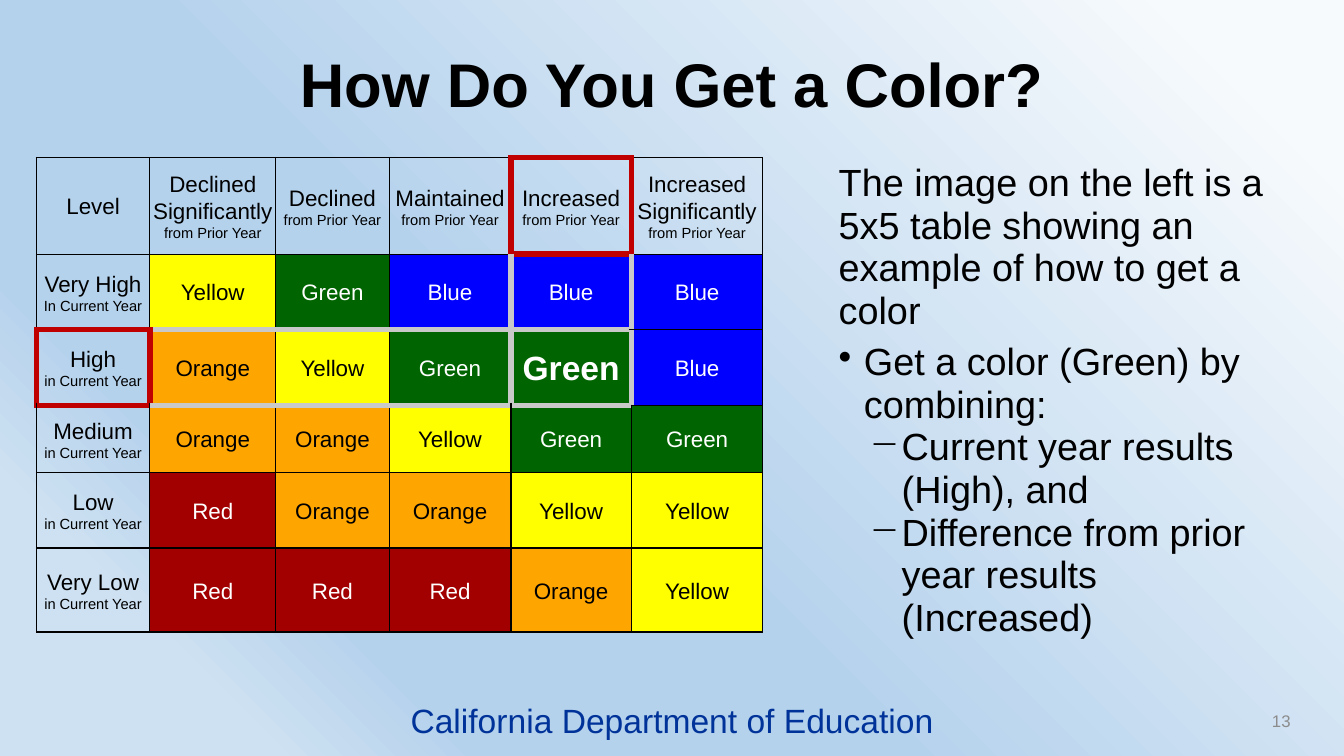
from lxml import etree
from pptx import Presentation
from pptx.dml.color import RGBColor
from pptx.enum import text
from pptx.oxml import ns
from pptx.util import Pt

FONT = "Arial"
COLORS = {
    "black": "000000", "white": "FFFFFF", "navy": "003399", "gray": "8C8C8C",
    "outcome": "C00000", "path": "C9C9C9",
    "Red": "A20000", "Orange": "FFA500", "Yellow": "FFFF00",
    "Green": "006500", "Blue": "0000FF",
}
GRADIENT = [(8, "F7FAFD"), (57, "B5D2EC"), (77, "B5D2EC"), (87, "CEE1F2")]

COLUMN_WIDTHS = [81, 90, 81, 87, 86, 94]
ROW_HEIGHTS = [69, 54, 54, 48, 54, 60]
CHANGES = ["Declined Significantly", "Declined", "Maintained", "Increased",
           "Increased Significantly"]
LEVELS = [
    ("Very High", "In Current Year", "Yellow Green Blue Blue Blue"),
    ("High", "in Current Year", "Orange Yellow Green Green Blue"),
    ("Medium", "in Current Year", "Orange Orange Yellow Green Green"),
    ("Low", "in Current Year", "Red Orange Orange Yellow Yellow"),
    ("Very Low", "in Current Year", "Red Red Red Orange Yellow"),
]
ONE_PARAGRAPH_LEVELS = ("High", "Very Low")
RESULT = (2, 4)
# Frames as (rows, columns, color); later frames cover earlier ones.
FRAMES = [
    (range(1, 3), range(4, 5), "path"),
    (range(2, 3), range(1, 5), "path"),
    (range(0, 1), range(4, 5), "outcome"),
    (range(2, 3), range(0, 1), "outcome"),
]
# Each side: row step and column step to the neighbor, and the neighbor's side.
SIDES = {"L": (0, -1, "R"), "R": (0, 1, "L"), "T": (-1, 0, "B"), "B": (1, 0, "T")}

BODY = [
    ("The image on the left is a 5x5 table showing an example of how to get a color",
     0, None, 0, 0, 6),
    ("Get a color (Green) by combining:", 0, "•", 18, -18, 0),
    ("Current year results (High), and", 1, "−", 45, -23, 0),
    ("Difference from prior year results (Increased)", 1, "−", 45, -23, 0),
]


def add_run(paragraph, words, size, color="black", bold=False):
    run = paragraph.add_run()
    run.text = words
    run.font.name = FONT
    run.font.size = Pt(size)
    run.font.bold = bold
    run.font.color.rgb = RGBColor.from_string(COLORS[color])


def paint_background(slide):
    fill = slide.background.fill
    fill.gradient()
    fill.gradient_angle = 225
    stops = next(slide.element.iter(ns.qn("a:gsLst")))
    for stop in list(stops):
        stops.remove(stop)
    for position, color in GRADIENT:
        stop = etree.SubElement(stops, ns.qn("a:gs"), pos=str(position * 1000))
        etree.SubElement(stop, ns.qn("a:srgbClr"), val=color)


def add_title(slide, words):
    title = slide.shapes.title
    title.left, title.top, title.width, title.height = Pt(0), Pt(0), Pt(960), Pt(124.5)
    frame = title.text_frame
    frame.vertical_anchor = text.MSO_ANCHOR.MIDDLE
    paragraph = frame.paragraphs[0]
    paragraph.alignment = text.PP_ALIGN.CENTER
    paragraph.line_spacing = 0.9
    add_run(paragraph, words, 44, bold=True)


def add_text_box(slide, left, top, width, height, anchor):
    shape = slide.shapes.add_textbox(Pt(left), Pt(top), Pt(width), Pt(height))
    shape.text_frame.word_wrap = True
    shape.text_frame.vertical_anchor = anchor
    return shape.text_frame


def add_label(slide, place, words, size, color, alignment):
    paragraph = add_text_box(slide, *place, text.MSO_ANCHOR.MIDDLE).paragraphs[0]
    paragraph.alignment = alignment
    add_run(paragraph, words, size, color)


def add_body(slide):
    frame = add_text_box(slide, 592, 112.5, 337, 355, text.MSO_ANCHOR.TOP)
    for index, (words, level, bullet, margin, indent, after) in enumerate(BODY):
        paragraph = frame.add_paragraph() if index else frame.paragraphs[0]
        paragraph.level = level
        paragraph.line_spacing = 0.94
        paragraph.space_after = Pt(after)
        add_run(paragraph, words, 27)
        if bullet:
            properties = paragraph._p.get_or_add_pPr()
            properties.set("marL", str(Pt(margin)))
            properties.set("indent", str(Pt(indent)))
            etree.SubElement(properties, ns.qn("a:buChar"), char=bullet)


def format_cell(cell, fill=None):
    cell.margin_left = cell.margin_right = Pt(2)
    cell.margin_top, cell.margin_bottom = Pt(0.7), Pt(0)
    cell.vertical_anchor = text.MSO_ANCHOR.MIDDLE
    if fill:
        cell.fill.solid()
        cell.fill.fore_color.rgb = RGBColor.from_string(COLORS[fill])
    else:
        cell.fill.background()


def format_paragraph(paragraph):
    paragraph.alignment = text.PP_ALIGN.CENTER
    paragraph.line_spacing = 1.07
    return paragraph


def fill_heading(cell, heading, period=None, one_paragraph=False):
    format_cell(cell)
    paragraph = format_paragraph(cell.text_frame.paragraphs[0])
    add_run(paragraph, heading, 16)
    if period:
        if one_paragraph:
            paragraph.add_line_break()
        else:
            paragraph = format_paragraph(cell.text_frame.add_paragraph())
        add_run(paragraph, period, 10.5)


def fill_color_cell(cell, color, is_result):
    format_cell(cell, color)
    paragraph = format_paragraph(cell.text_frame.paragraphs[0])
    ink = "white" if color in ("Red", "Green", "Blue") else "black"
    add_run(paragraph, color, 24 if is_result else 16, ink, is_result)


def frame_borders():
    """Map (row, column, side) to the color of the thick frames."""
    borders = {}
    for rows, columns, color in FRAMES:
        for row in rows:
            for column in columns:
                for side, (down, right, opposite) in SIDES.items():
                    beside = (row + down, column + right)
                    if beside[0] in rows and beside[1] in columns:
                        continue
                    borders[row, column, side] = color
                    borders[(*beside, opposite)] = color
    return borders


def set_border(cell, position, side, color, width):
    properties = cell._tc.get_or_add_tcPr()
    line = etree.Element(ns.qn(f"a:ln{side}"), w=str(Pt(width)))
    fill = etree.SubElement(line, ns.qn("a:solidFill"))
    etree.SubElement(fill, ns.qn("a:srgbClr"), val=COLORS[color])
    properties.insert(position, line)


def add_color_table(slide):
    graphic = slide.shapes.add_table(
        len(ROW_HEIGHTS), len(COLUMN_WIDTHS), Pt(26), Pt(112.5),
        Pt(sum(COLUMN_WIDTHS)), Pt(sum(ROW_HEIGHTS)))
    table = graphic.table
    table.first_row = table.horz_banding = False
    for column, width in zip(table.columns, COLUMN_WIDTHS):
        column.width = Pt(width)
    for row, height in zip(table.rows, ROW_HEIGHTS):
        row.height = Pt(height)

    fill_heading(table.cell(0, 0), "Level")
    for column, change in enumerate(CHANGES, 1):
        fill_heading(table.cell(0, column), change, "from Prior Year")
    for row, (level, period, colors) in enumerate(LEVELS, 1):
        fill_heading(table.cell(row, 0), level, period, level in ONE_PARAGRAPH_LEVELS)
        for column, color in enumerate(colors.split(), 1):
            fill_color_cell(table.cell(row, column), color, (row, column) == RESULT)

    thick = frame_borders()
    for row in range(len(ROW_HEIGHTS)):
        for column in range(len(COLUMN_WIDTHS)):
            for position, side in enumerate(SIDES):
                color = thick.get((row, column, side))
                set_border(table.cell(row, column), position, side,
                           color or "black", 4.5 if color else 1)


def main():
    presentation = Presentation()
    presentation.slide_width, presentation.slide_height = Pt(960), Pt(540)
    slide = presentation.slides.add_slide(presentation.slide_layouts[5])
    paint_background(slide)
    add_title(slide, "How Do You Get a Color?")
    add_color_table(slide)
    add_body(slide)
    add_label(slide, (283, 500, 394, 29), "California Department of Education",
              24, "navy", text.PP_ALIGN.CENTER)
    add_label(slide, (713, 500.5, 216, 29), "13", 12, "gray", text.PP_ALIGN.RIGHT)
    presentation.save("out.pptx")


if __name__ == "__main__":
    main()
